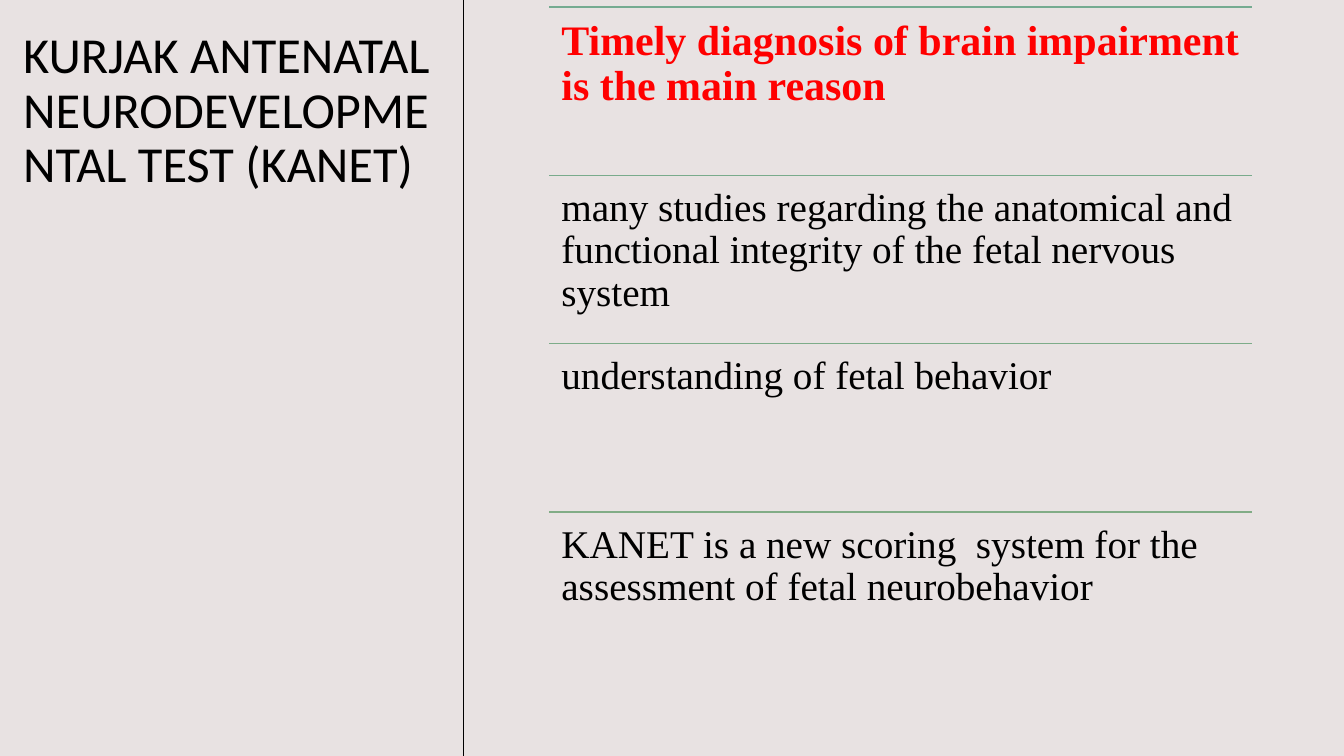
from dataclasses import dataclass

from pptx import Presentation
from pptx.dml.color import RGBColor
from pptx.enum.shapes import MSO_CONNECTOR
from pptx.enum.text import MSO_ANCHOR, MSO_AUTO_SIZE, PP_ALIGN
from pptx.oxml.ns import qn
from pptx.slide import Slide
from pptx.text.text import TextFrame
from pptx.util import Pt

SLIDE_WIDTH, SLIDE_HEIGHT = 960, 540
DIVIDER_X = 331.2
REASONS_LEFT, REASONS_TOP = 392.4, 5.04
REASONS_WIDTH, REASON_HEIGHT = 501.84, 120.24


@dataclass(frozen=True)
class Reason:
    text: str
    rule_color: str
    size: float = 28
    color: str = "000000"
    bold: bool = False


REASONS = [
    Reason("Timely diagnosis of brain impairment is the main reason",
           "75AB91", size=30, color="FF0000", bold=True),
    Reason("many studies regarding the anatomical and functional integrity "
           "of the fetal nervous system", "79AB8C"),
    Reason("understanding of fetal behavior", "7DAC89"),
    Reason("KANET is a new scoring  system for the assessment of fetal "
           "neurobehavior", "81AC86"),
]


def rgb(hex_color: str) -> RGBColor:
    return RGBColor.from_string(hex_color)


def write(frame: TextFrame, text: str, *, font: str, size: float,
          color: str = "000000", bold: bool = False, inset: float = 8.64) -> None:
    frame.word_wrap = True
    frame.auto_size = MSO_AUTO_SIZE.NONE
    frame.vertical_anchor = MSO_ANCHOR.TOP
    frame.margin_left = frame.margin_right = Pt(inset)
    frame.margin_top = frame.margin_bottom = Pt(min(inset, 8.64) if inset > 8 else inset / 2)
    paragraph = frame.paragraphs[0]
    paragraph.text = text
    paragraph.alignment = PP_ALIGN.LEFT
    paragraph.line_spacing = 0.9
    for run in paragraph.runs:
        run.font.name = font
        run.font.size = Pt(size)
        run.font.bold = bold
        run.font.color.rgb = rgb(color)


def draw_line(slide: Slide, x1: float, y1: float, x2: float, y2: float,
              color: str, width: float) -> None:
    line = slide.shapes.add_connector(
        MSO_CONNECTOR.STRAIGHT, Pt(x1), Pt(y1), Pt(x2), Pt(y2))
    line.line.color.rgb = rgb(color)
    line.line.width = Pt(width)
    properties = line._element.spPr
    properties.append(properties.makeelement(qn("a:effectLst"), {}))


def draw_reason(slide: Slide, reason: Reason, top: float) -> None:
    draw_line(slide, REASONS_LEFT, top, REASONS_LEFT + REASONS_WIDTH, top,
              reason.rule_color, 1)
    box = slide.shapes.add_textbox(
        Pt(REASONS_LEFT), Pt(top), Pt(REASONS_WIDTH), Pt(REASON_HEIGHT))
    write(box.text_frame, reason.text, font="Times New Roman",
          size=reason.size, color=reason.color, bold=reason.bold)


def main() -> None:
    deck = Presentation()
    deck.slide_width, deck.slide_height = Pt(SLIDE_WIDTH), Pt(SLIDE_HEIGHT)
    slide = deck.slides.add_slide(deck.slide_layouts.get_by_name("Title Only"))
    slide.background.fill.solid()
    slide.background.fill.fore_color.rgb = rgb("E8E2E2")

    # Title column
    title = slide.shapes.title
    title.left, title.top = Pt(9.36), Pt(18)
    title.width, title.height = Pt(321.84), Pt(455.76)
    write(title.text_frame,
          "KURJAK ANTENATAL\vNEURODEVELOPMENTAL TEST (KANET)",
          font="Calibri", size=36, inset=7.2)

    # Divider between the columns
    draw_line(slide, DIVIDER_X, SLIDE_HEIGHT, DIVIDER_X, 0, "000000", 0.5)

    # Ruled list of reasons
    for index, reason in enumerate(REASONS):
        draw_reason(slide, reason, REASONS_TOP + index * REASON_HEIGHT)

    deck.save("out.pptx")


if __name__ == "__main__":
    main()
